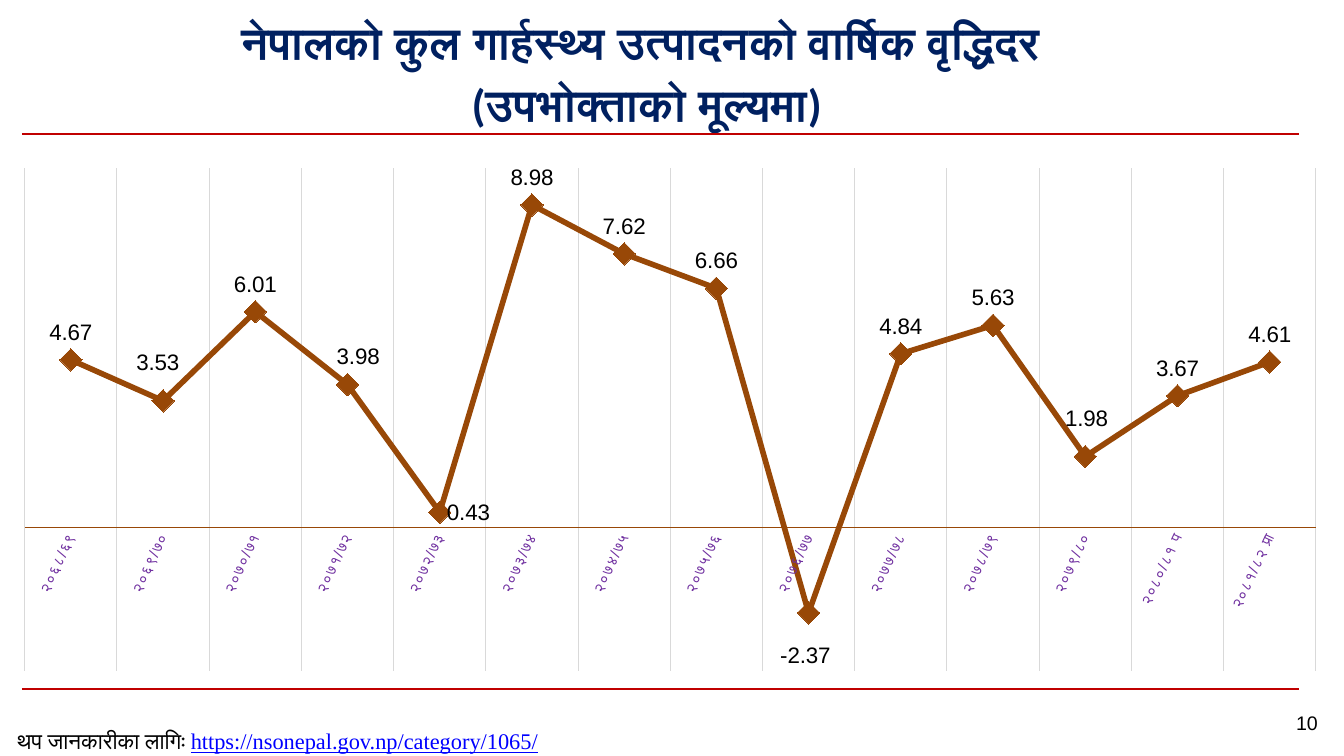
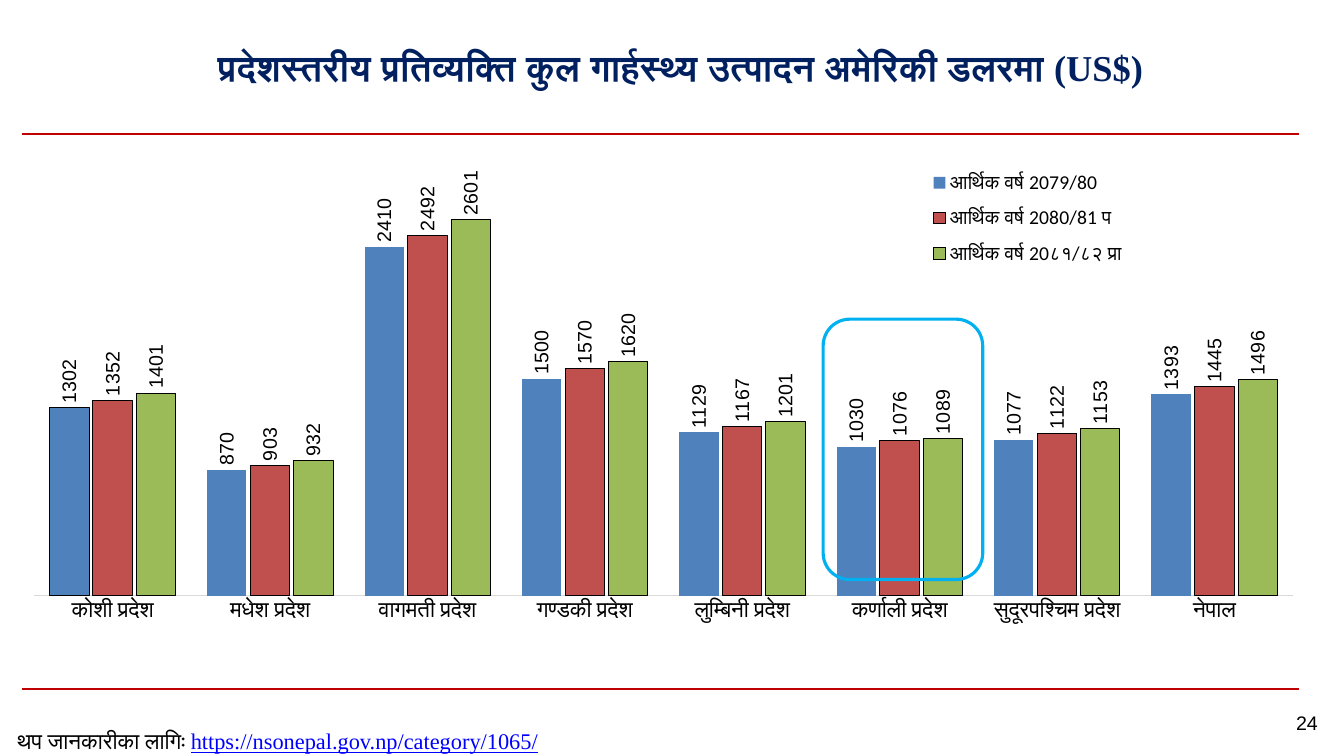
from pptx import Presentation
from pptx.chart.data import CategoryChartData
from pptx.dml.color import RGBColor
from pptx.enum.chart import (XL_CHART_TYPE, XL_LABEL_POSITION, XL_LEGEND_POSITION,
                             XL_MARKER_STYLE, XL_TICK_MARK)
from pptx.enum.shapes import MSO_CONNECTOR, MSO_SHAPE
from pptx.enum.text import MSO_ANCHOR, MSO_AUTO_SIZE, PP_ALIGN
from pptx.oxml import parse_xml
from pptx.oxml.ns import nsdecls
from pptx.util import Inches, Pt

COLORS = {
    "rule": "C00000", "title": "002060", "text": "000000", "address": "0000FF",
    "growth": "984807", "years": "7030A0", "grid": "D9D9D9", "highlight": "00B0F0",
    "first_year": "4F81BD", "second_year": "C0504D", "third_year": "9BBB59",
}
COLUMNS, ROWS = 160, 90  # square cells, twelve to the inch
CELL = Inches(1) / 12
SOURCE_LABEL = "थप जानकारीका लागिः "
SOURCE_ADDRESS = "https://nsonepal.gov.np/category/1065/"


def cells(*counts):
    return [round(count * CELL) for count in counts]


def color(name):
    return RGBColor.from_string(COLORS[name])


def style_font(font, size, name="Arial", tint="text", bold=False):
    font.size, font.name, font.bold = Pt(size), name, bold
    font.color.rgb = color(tint)


def style_line(line, tint, width):
    line.color.rgb = color(tint)
    line.width = Pt(width)


def set_layout(parent, index, modes="", **percents):
    """Place a chart part by percents of the chart's size."""
    for old in parent.xpath("c:layout"):
        parent.remove(old)
    places = "".join(f'<c:{key} val="{value / 100}"/>' for key, value in percents.items())
    parent.insert(index, parse_xml(
        f'<c:layout {nsdecls("c")}><c:manualLayout>{modes}{places}'
        '</c:manualLayout></c:layout>'))


EDGES = '<c:xMode val="edge"/><c:yMode val="edge"/>'


def turn_text(chart, owner, degrees):
    for body in chart.element.xpath(f".//{owner}/c:txPr/a:bodyPr"):
        body.set("rot", str(degrees * 60000))
        body.set("vert", "horz")


class Deck:
    def __init__(self):
        self.presentation = Presentation()
        self.presentation.slide_width, self.presentation.slide_height = cells(COLUMNS, ROWS)
        self.slide = None

    def start_slide(self, title, place, size, font, number):
        self.slide = self.presentation.slides.add_slide(self.presentation.slide_layouts[5])
        self.title(title, place, size, font)
        for row in (16, 82):
            self.rule(row)
        self.footer(number)

    def title(self, text, place, size, font):
        heading = self.slide.shapes.title
        heading.left, heading.top, heading.width, heading.height = cells(*place)
        frame = heading.text_frame
        frame.text = text
        frame.word_wrap, frame.auto_size = True, MSO_AUTO_SIZE.NONE
        frame.vertical_anchor = MSO_ANCHOR.MIDDLE
        paragraph = frame.paragraphs[0]
        paragraph.alignment, paragraph.line_spacing = PP_ALIGN.CENTER, 1.14
        for run in paragraph.runs:
            style_font(run.font, size, font, "title", bold=True)

    def rule(self, row):
        line = self.slide.shapes.add_connector(
            MSO_CONNECTOR.STRAIGHT, *cells(2.6, row, 154.7, row))
        style_line(line.line, "rule", 1.5)
        line.element.spPr.append(parse_xml(f'<a:effectLst {nsdecls("a")}/>'))

    def text_box(self, place):
        frame = self.slide.shapes.add_textbox(*cells(*place)).text_frame
        frame.word_wrap = True
        return frame.paragraphs[0]

    def footer(self, number):
        page = self.text_box((152, 84, 7.2, 4))
        page.text, page.alignment = number, PP_ALIGN.CENTER
        style_font(page.runs[0].font, 14)

        source = self.text_box((0.9, 86, 74, 4))
        label, address = source.add_run(), source.add_run()
        label.text, address.text = SOURCE_LABEL, SOURCE_ADDRESS
        style_font(label.font, 16)
        style_font(address.font, 16, "Times New Roman", "address")
        address.font.underline = True

    def chart(self, kind, place, categories, series, number_format, limits, plot):
        data = CategoryChartData(number_format=number_format)
        data.categories = categories
        for name, values in series:
            data.add_series(name, values)
        chart = self.slide.shapes.add_chart(kind, *cells(*place), data).chart
        chart.has_title = chart.has_legend = False
        style_font(chart.font, 14, "Calibri")
        chart.plots[0].vary_by_categories = False
        values_axis = chart.value_axis
        values_axis.minimum_scale, values_axis.maximum_scale = limits
        values_axis.has_major_gridlines = values_axis.visible = False
        chart.category_axis.major_tick_mark = XL_TICK_MARK.NONE
        left, top, width, height = plot
        set_layout(chart.element.xpath(".//c:plotArea")[0], 0,
                   '<c:layoutTarget val="inner"/>' + EDGES,
                   x=left, y=top, w=width, h=height)
        return chart

    def value_labels(self, series, size, position, number_format):
        labels = series.data_labels
        labels.show_value, labels.position = True, position
        labels.number_format, labels.number_format_is_linked = number_format, False
        style_font(labels.font, size)

    def legend(self, chart, left, top, width, height):
        chart.has_legend = True
        chart.legend.position = XL_LEGEND_POSITION.BOTTOM
        chart.legend.include_in_layout = False
        style_font(chart.legend.font, 14, "Calibri")
        set_layout(chart.element.xpath(".//c:legend")[0], 1, EDGES,
                   x=left, y=top, w=width, h=height)

    def highlight(self, *place):
        frame = self.slide.shapes.add_shape(MSO_SHAPE.ROUNDED_RECTANGLE, *cells(*place))
        frame.shadow.inherit = False
        frame.fill.background()
        style_line(frame.line, "highlight", 2.25)


def growth_slide(deck):
    deck.start_slide("नेपालको कुल गार्हस्थ्य उत्पादनको वार्षिक वृद्धिदर \v(उपभोक्ताको मूल्यमा)",
                     (23, 2, 108, 12.4), 32, "Calibri", "10")
    years = ["२०६८/६९", "२०६९/७०", "२०७०/७१", "२०७१/७२", "२०७२/७३", "२०७३/७४", "२०७४/७५",
             "२०७५/७६", "२०७६/७७", "२०७७/७८", "२०७८/७९", "२०७९/८०", "२०८०/८१ प",
             "२०८१/८२ प्रा"]
    rates = [4.67, 3.53, 6.01, 3.98, 0.43, 8.98, 7.62, 6.66, -2.37, 4.84, 5.63, 1.98,
             3.67, 4.61]
    chart = deck.chart(XL_CHART_TYPE.LINE_MARKERS, (1, 18, 158.3, 64), years,
                       [("Series 1", rates)], "0.00", (-4, 10), (1.23, 3.2, 97.1, 93.6))

    # Year axis, with letters spaced by one point
    axis = chart.category_axis
    style_font(axis.tick_labels.font, 10.6, tint="years")
    turn_text(chart, "c:catAx", -65)
    for letters in chart.element.xpath(".//c:catAx/c:txPr//a:defRPr"):
        letters.set("spc", "100")
    style_line(axis.format.line, "growth", 0.75)
    axis.has_major_gridlines = True
    style_line(axis.major_gridlines.format.line, "grid", 0.75)

    # Growth line
    growth = chart.plots[0].series[0]
    growth.smooth = False
    style_line(growth.format.line, "growth", 4)
    growth.marker.style, growth.marker.size = XL_MARKER_STYLE.DIAMOND, 16
    growth.marker.format.fill.solid()
    growth.marker.format.fill.fore_color.rgb = color("growth")
    style_line(growth.marker.format.line, "growth", 0.75)
    above, below, beside = (XL_LABEL_POSITION.ABOVE, XL_LABEL_POSITION.BELOW,
                            XL_LABEL_POSITION.RIGHT)
    deck.value_labels(growth, 16, above, "0.00")

    # Labels moved clear of the line: position, then shift in percents of the chart
    moved = {1: (above, -0.4, -2), 3: (above, 0.8, -0.1), 4: (beside, -0.6, 0),
             8: (below, -0.25, 2.8), 11: (above, 0.1, -2)}
    for index, (position, right, down) in moved.items():
        label = growth.points[index].data_label
        style_font(label.font, 16)
        label.position = position
        set_layout(chart.element.xpath(f'.//c:dLbl[c:idx/@val="{index}"]')[0], 1,
                   x=right, y=down)
    for leader in chart.element.xpath(".//c:showLeaderLines"):
        leader.set("val", "0")


def province_slide(deck):
    deck.start_slide("प्रदेशस्तरीय प्रतिव्यक्ति कुल गार्हस्थ्य उत्पादन अमेरिकी डलरमा (US$)",
                     (15, 3, 132, 9.2), 26, "Times New Roman", "24")
    provinces = ["कोशी प्रदेश", "मधेश प्रदेश", "वागमती प्रदेश", "गण्डकी प्रदेश",
                 "लुम्बिनी प्रदेश", "कर्णाली प्रदेश", "सुदूरपश्चिम प्रदेश", "नेपाल"]
    incomes = [
        ("आर्थिक वर्ष 2079/80", [1302, 870, 2410, 1500, 1129, 1030, 1077, 1393]),
        ("आर्थिक वर्ष 2080/81 प", [1352, 903, 2492, 1570, 1167, 1076, 1122, 1445]),
        ("आर्थिक वर्ष 20८१/८२ प्रा", [1401, 932, 2601, 1620, 1201, 1089, 1153, 1496]),
    ]
    chart = deck.chart(XL_CHART_TYPE.COLUMN_CLUSTERED, (1, 18, 156, 62), provinces,
                       incomes, "0", (0, 3000), (1.95, 2, 96.1, 83.4))
    style_font(chart.category_axis.tick_labels.font, 16, "Calibri")
    style_line(chart.category_axis.format.line, "grid", 0.75)
    plot = chart.plots[0]
    plot.gap_width, plot.overlap = 80, -10

    # Columns, one colour a year
    for year, tint in zip(plot.series, ("first_year", "second_year", "third_year")):
        year.format.fill.solid()
        year.format.fill.fore_color.rgb = color(tint)
        if tint == "first_year":
            year.format.line.fill.background()
        else:
            style_line(year.format.line, "text", 0.75)
        deck.value_labels(year, 14, XL_LABEL_POSITION.OUTSIDE_END, "0")
    turn_text(chart, "c:dLbls", -90)

    # Outlined first column
    first_column = plot.series[0].points[0].format
    first_column.fill.solid()
    first_column.fill.fore_color.rgb = color("first_year")
    style_line(first_column.line, "text", 0.75)

    deck.legend(chart, 69.8, 1.6, 16, 22.5)
    deck.highlight(98, 38, 19, 31)


def main():
    deck = Deck()
    growth_slide(deck)
    province_slide(deck)
    deck.presentation.save("out.pptx")


if __name__ == "__main__":
    main()
